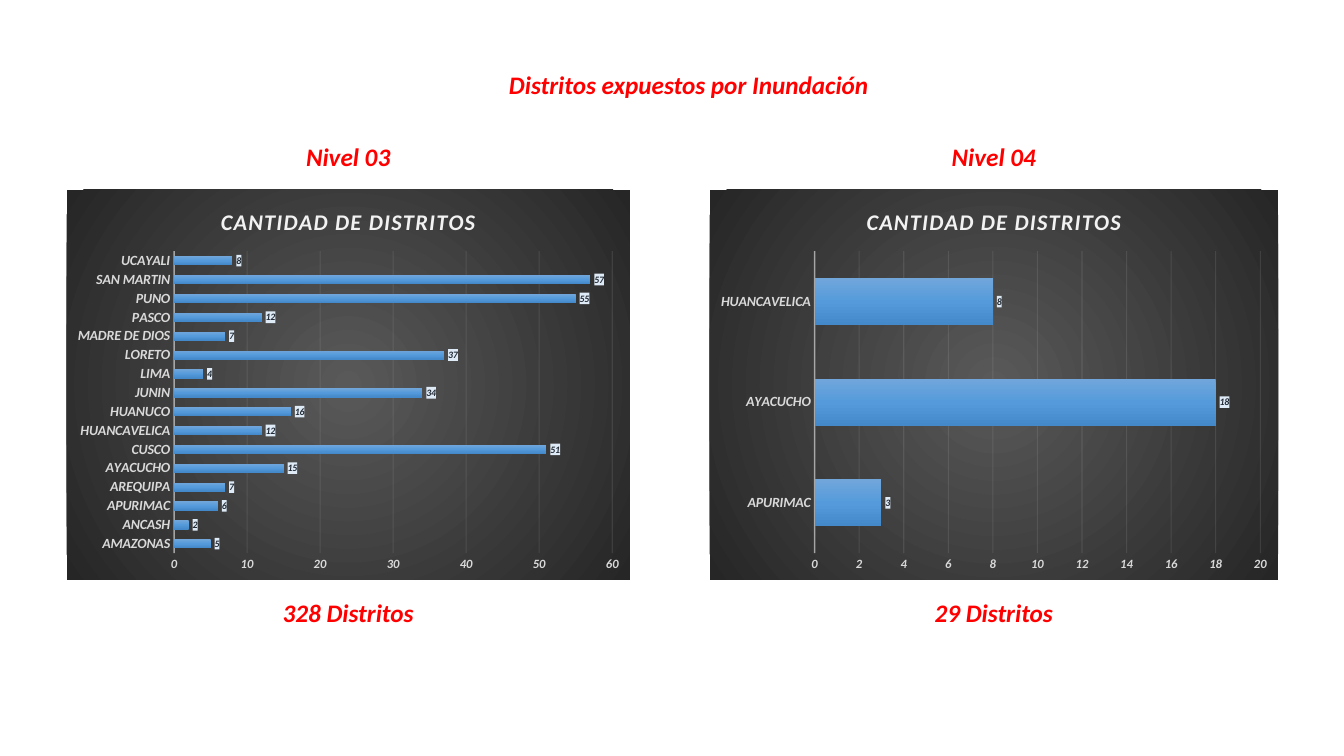
import pptx
import pptx.util
import pptx.chart.data
import pptx.dml.color
import pptx.enum.chart
import pptx.enum.text
import pptx.oxml
import pptx.oxml.ns
from lxml import etree

Pt = pptx.util.Pt
SLIDE = (960, 540)
TITLE = ("Distritos expuestos por Inundación", 355, 46, 274)
CHART_TITLE = "CANTIDAD DE DISTRITOS"
CHART_TOP, CHART_HEIGHT = 135.4, 278.6
CAPTION_WIDTH, CAPTION_HEIGHT = 124, 29
LEVEL_TOP, TOTAL_TOP = 97.2, 423.4
PANELS = [
    {
        "level": "Nivel 03",
        "total": "328 Distritos",
        "left": 47.5,
        "width": 402.5,
        "data": {
            "AMAZONAS": 5, "ANCASH": 2, "APURIMAC": 6, "AREQUIPA": 7,
            "AYACUCHO": 15, "CUSCO": 51, "HUANCAVELICA": 12, "HUANUCO": 16,
            "JUNIN": 34, "LIMA": 4, "LORETO": 37, "MADRE DE DIOS": 7,
            "PASCO": 12, "PUNO": 55, "SAN MARTIN": 57, "UCAYALI": 8,
        },
    },
    {
        "level": "Nivel 04",
        "total": "29 Distritos",
        "left": 506.9,
        "width": 406.1,
        "data": {"APURIMAC": 3, "AYACUCHO": 18, "HUANCAVELICA": 8},
    },
]
BACK_STOPS = [(0, "595959"), (100, "262626")]
BAR_STOPS = [(0, "71A6DB"), (50, "559BDB"), (100, "448ACA")]
CENTER = '<a:path path="circle"><a:fillToRect l="50000" t="50000" r="50000" b="50000"/></a:path>'
DOWN = '<a:lin ang="5400000" scaled="0"/>'
NS = pptx.oxml.ns.nsdecls("a", "c")


def color(value):
    return pptx.dml.color.RGBColor.from_string(value)


def style(font, size, hex_color):
    values = {"size": Pt(size), "name": "Calibri", "bold": True, "italic": True}
    for key, value in values.items():
        setattr(font, key, value)
    font.color.rgb = color(hex_color)


def gradient(stops, direction):
    marks = "".join(
        f'<a:gs pos="{pos * 1000}"><a:srgbClr val="{value}"/></a:gs>' for pos, value in stops
    )
    return f"<a:gradFill {NS}><a:gsLst>{marks}</a:gsLst>{direction}</a:gradFill>"


def shape_format(fill):
    return pptx.oxml.parse_xml(f"<c:spPr {NS}>{fill}<a:ln><a:noFill/></a:ln></c:spPr>")


def write(sp, text, box, wrap):
    for key, value in zip(("left", "top", "width", "height"), box):
        setattr(sp, key, Pt(value))
    tf = sp.text_frame
    values = {
        "word_wrap": wrap,
        "auto_size": pptx.enum.text.MSO_AUTO_SIZE.SHAPE_TO_FIT_TEXT,
        "vertical_anchor": pptx.enum.text.MSO_ANCHOR.TOP,
    }
    for key, value in values.items():
        setattr(tf, key, value)
    p = tf.paragraphs[0]
    p.alignment = pptx.enum.text.PP_ALIGN.CENTER
    p.line_spacing = 1.0
    p.space_before = Pt(0)
    r = p.add_run()
    r.text = text
    style(r.font, 18, "FF0000")


def format_axis(axis, size, line, width, opacity):
    axis.major_tick_mark = axis.minor_tick_mark = pptx.enum.chart.XL_TICK_MARK.NONE
    style(axis.tick_labels.font, size, "D9D9D9")
    line.width = Pt(width)
    line.color.rgb = color("F2F2F2")
    for clr in axis._element.xpath(".//a:ln//a:srgbClr"):
        etree.SubElement(clr, pptx.oxml.ns.qn("a:alpha"), val=str(opacity * 1000))


def add_bars(s, panel):
    data = pptx.chart.data.CategoryChartData(number_format="#,##0")
    data.categories = list(panel["data"])
    data.add_series(CHART_TITLE, list(panel["data"].values()))
    chart = s.shapes.add_chart(
        pptx.enum.chart.XL_CHART_TYPE.BAR_CLUSTERED,
        Pt(panel["left"]), Pt(CHART_TOP), Pt(panel["width"]), Pt(CHART_HEIGHT), data,
    ).chart
    chart.has_legend = False
    chart.font.name = "Calibri"
    chart.font.size = Pt(10)
    chart._chartSpace.xpath("c:txPr")[0].addprevious(shape_format(gradient(BACK_STOPS, CENTER)))

    chart.has_title = True
    r = chart.chart_title.text_frame.paragraphs[0].add_run()
    r.text = CHART_TITLE
    style(r.font, 16, "F2F2F2")
    r.font._element.set("spc", "100")
    chart.chart_title.include_in_layout = False

    format_axis(chart.category_axis, 10, chart.category_axis.format.line, 1, 54)
    values = chart.value_axis
    values.has_major_gridlines = True
    format_axis(values, 9, values.major_gridlines.format.line, 0.75, 10)
    values.format.line.fill.background()
    values.tick_labels.number_format = "#,##0"
    values.tick_labels.number_format_is_linked = False

    plot = chart.plots[0]
    for key, value in {"gap_width": 115, "overlap": -20, "vary_by_categories": False}.items():
        setattr(plot, key, value)
    series = plot.series[0]
    series.format.line.fill.background()
    bar = series._element.get_or_add_spPr()
    bar.insert(0, pptx.oxml.parse_xml(gradient(BAR_STOPS, DOWN)))

    labels = series.data_labels
    style(labels.font, 7, "222A35")
    settings = {
        "show_value": True,
        "number_format": "#,##0",
        "number_format_is_linked": False,
        "position": pptx.enum.chart.XL_LABEL_POSITION.OUTSIDE_END,
    }
    for key, value in settings.items():
        setattr(labels, key, value)
    label_fill = '<a:solidFill><a:srgbClr val="DEEBF7"/></a:solidFill>'
    labels._element.xpath("c:txPr")[0].addprevious(shape_format(label_fill))


def main():
    prs = pptx.Presentation()
    prs.slide_width, prs.slide_height = Pt(SLIDE[0]), Pt(SLIDE[1])
    s = prs.slides.add_slide(prs.slide_layouts[5])
    text, left, top, width = TITLE
    write(s.shapes.title, text, (left, top, width, CAPTION_HEIGHT), False)
    for panel in PANELS:
        add_bars(s, panel)
        left = panel["left"] + (panel["width"] - CAPTION_WIDTH) / 2
        for key, top in (("level", LEVEL_TOP), ("total", TOTAL_TOP)):
            box = (left, top, CAPTION_WIDTH, CAPTION_HEIGHT)
            sp = s.shapes.add_textbox(*map(Pt, box))
            write(sp, panel[key], box, True)
    prs.save("out.pptx")


if __name__ == "__main__":
    main()
